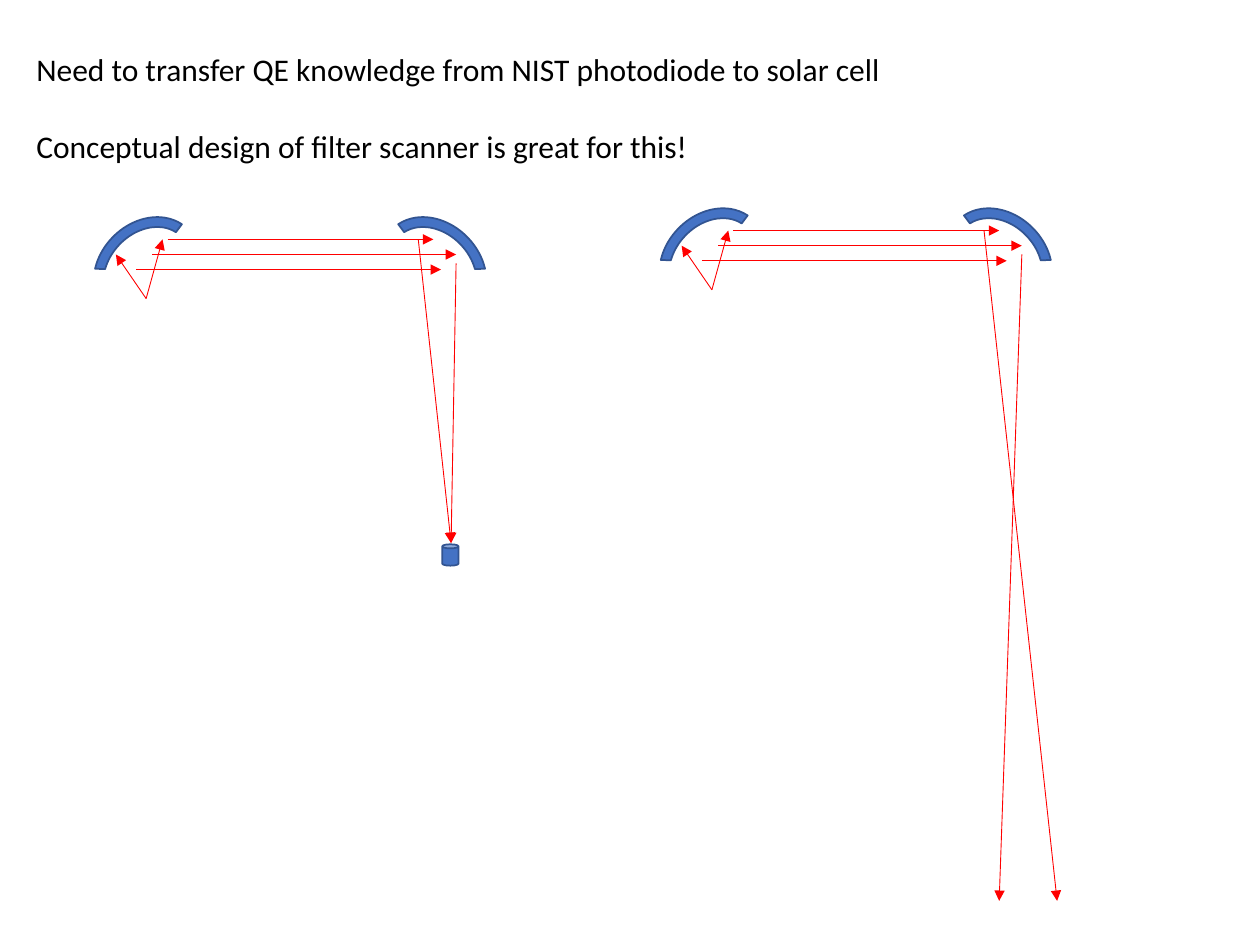
from pptx import Presentation, util as u
from pptx.dml.color import RGBColor
from pptx.enum import shapes, text
from pptx.oxml.ns import qn
from lxml import etree

Inches = u.Inches
COLORS = {"text": "000000", "fill": "4472C4", "outline": "325491", "ray": "FF0000"}
FONT = "Calibri"


def rgb(name):
    return RGBColor.from_string(COLORS[name])


def add_text(slide, lines, x, y, w, h, size=18, color="text", gap=0):
    s = slide.shapes.add_textbox(Inches(x), Inches(y), Inches(w), Inches(h))
    tf = s.text_frame
    tf.word_wrap = True
    tf.auto_size = text.MSO_AUTO_SIZE.SHAPE_TO_FIT_TEXT
    for i, line in enumerate(lines):
        p = tf.paragraphs[0] if i == 0 else tf.add_paragraph()
        if i:
            p.space_before = u.Pt(gap)
        r = p.add_run()
        r.text = line
        r.font.name = FONT
        r.font.size = u.Pt(size)
        r.font.color.rgb = rgb(color)


def add_part(slide, kind, x, y, w, h):
    s = slide.shapes.add_shape(kind, Inches(x), Inches(y), Inches(w), Inches(h))
    s.shadow.inherit = False
    s.fill.solid()
    s.fill.fore_color.rgb = rgb("fill")
    s.line.color.rgb = rgb("outline")
    s.line.width = u.Pt(1)
    return s


def add_mirror(slide, x, y, flipped=False):
    s = add_part(slide, shapes.MSO_SHAPE.BLOCK_ARC, x, y, 0.93, 0.76)
    for i, value in enumerate((137.326, 212.143, 0.104)):
        s.adjustments[i] = value
    s.rotation = 46.5 if flipped else 313.5
    if flipped:
        s._element.spPr.find(qn("a:xfrm")).set("flipH", "1")


def add_ray(slide, x1, y1, x2, y2):
    c = slide.shapes.add_connector(
        shapes.MSO_CONNECTOR.STRAIGHT, Inches(x1), Inches(y1), Inches(x2), Inches(y2))
    c.line.color.rgb = rgb("ray")
    c.line.width = u.Pt(0.5)
    etree.SubElement(c.line._get_or_add_ln(), qn("a:tailEnd"), type="triangle")
    etree.SubElement(c._element.spPr, qn("a:effectLst"))


def add_scanner(slide, x, y, focus_rays):
    """Draw two mirrors and their rays; x, y is the corner of the left mirror.

    focus_rays holds the end points of the two rays leaving the right mirror.
    """
    add_mirror(slide, x, y)
    add_mirror(slide, x + 2.275, y, flipped=True)
    source = (x + 0.46, y + 0.6)
    add_ray(slide, *source, x + 0.22, y + 0.25)
    add_ray(slide, *source, x + 0.59, y + 0.13)
    for start, end, drop in ((0.63, 2.74, 0.13), (0.51, 2.92, 0.25), (0.38, 2.8, 0.37)):
        add_ray(slide, x + start, y + drop, x + end, y + drop)
    for (start, drop), end in zip(((2.62, 0.13), (2.92, 0.32)), focus_rays):
        add_ray(slide, x + start, y + drop, *end)


def main():
    prs = Presentation()
    prs.slide_width, prs.slide_height = Inches(10), Inches(7.5)
    slide = prs.slides.add_slide(prs.slide_layouts[6])
    add_text(slide, ["Need to transfer QE knowledge from NIST photodiode to solar cell",
                     "Conceptual design of filter scanner is great for this!"],
             0.19, 0.35, 8.97, 1.01, gap=22)
    photodiode = (3.58, 4.31)
    add_scanner(slide, 0.7, 1.77, (photodiode, photodiode))
    add_part(slide, shapes.MSO_SHAPE.CAN, 3.51, 4.32, 0.13, 0.17)
    add_scanner(slide, 5.19, 1.7, ((8.39, 7.15), (7.93, 7.15)))
    prs.save("out.pptx")


if __name__ == "__main__":
    main()
